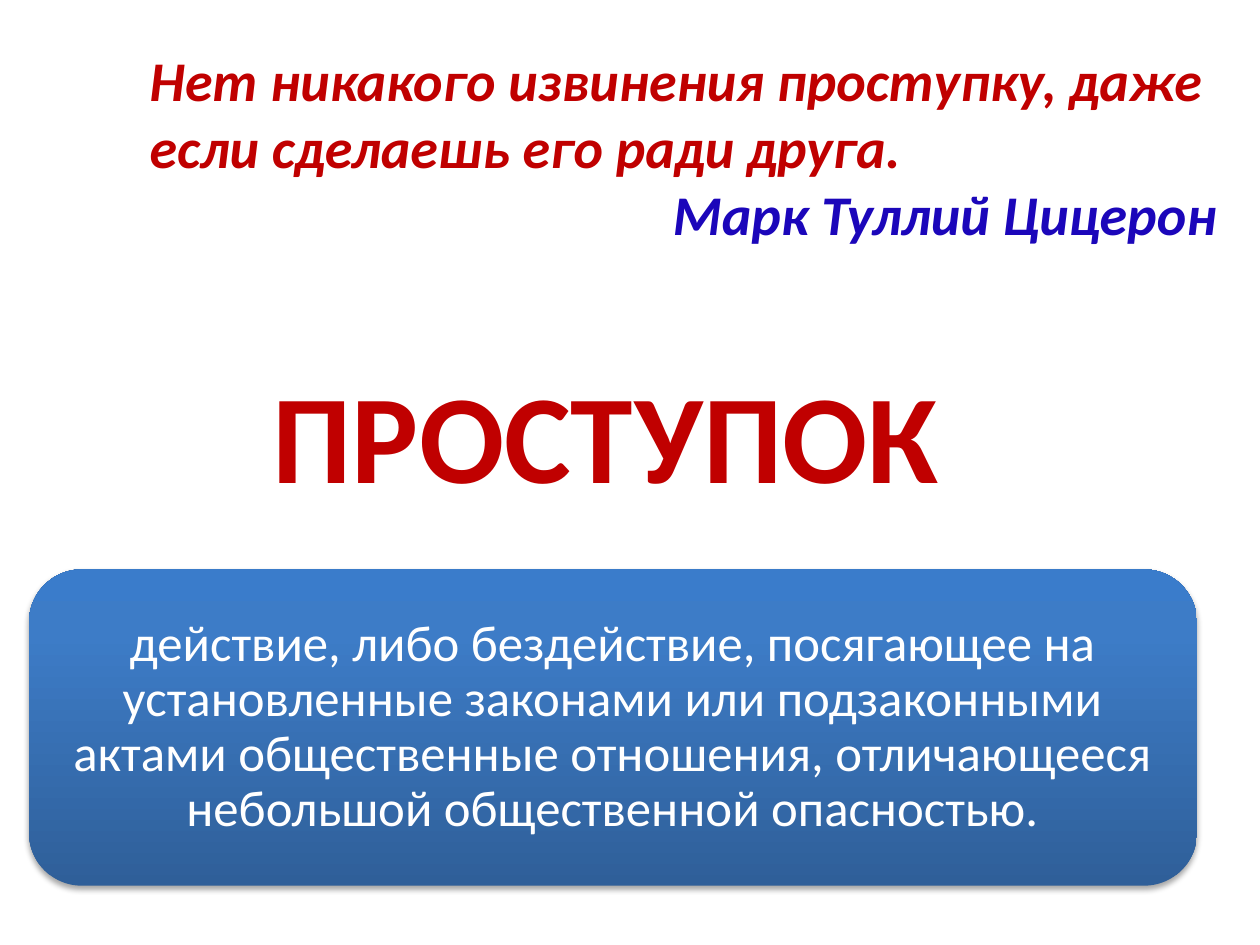
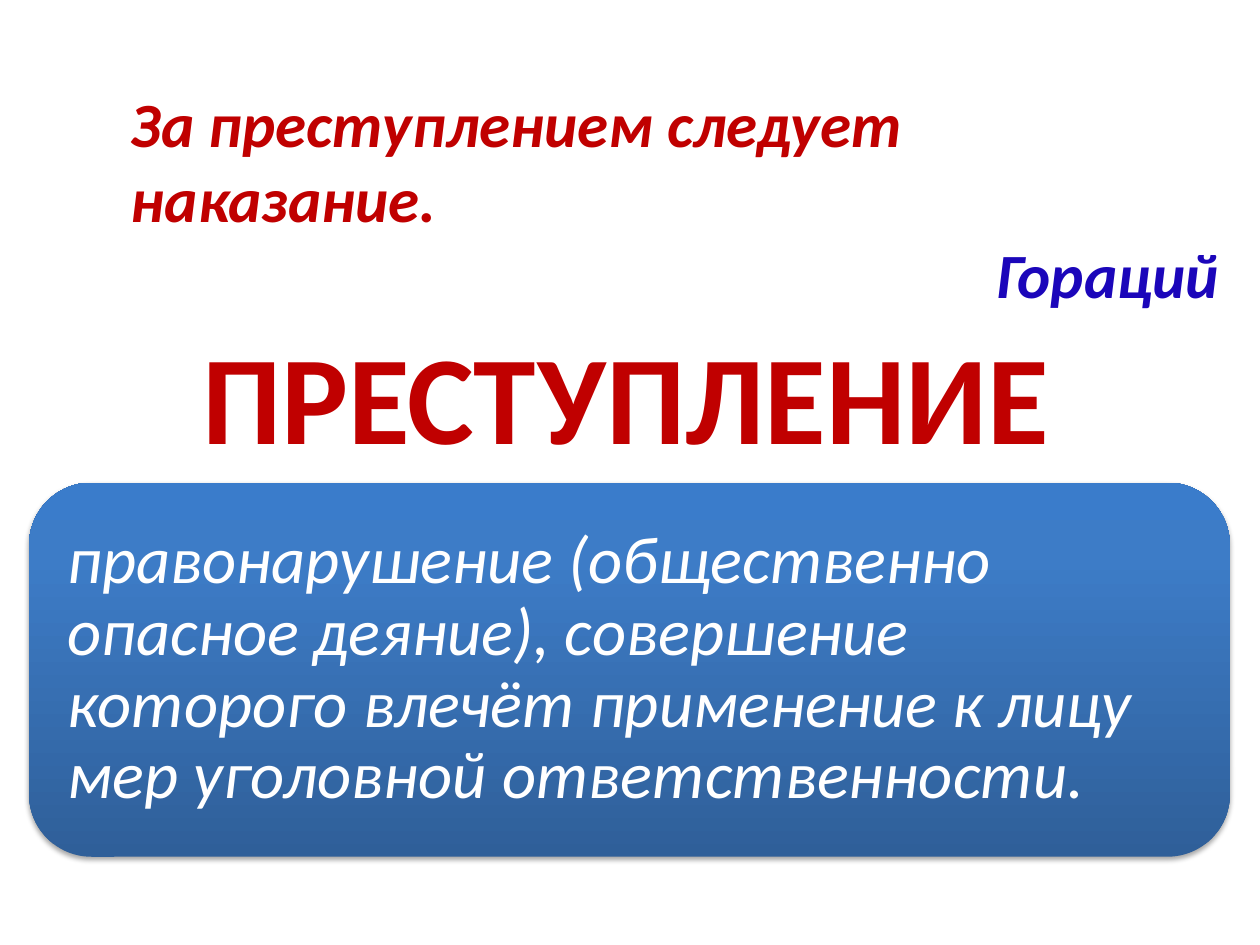
from lxml.etree import SubElement
from pptx import Presentation
from pptx.dml.color import RGBColor
from pptx.enum.shapes import MSO_SHAPE
from pptx.enum.text import MSO_ANCHOR, PP_ALIGN
from pptx.oxml.ns import qn
from pptx.util import Pt

RED = RGBColor(0xC0, 0x00, 0x00)
INDIGO = RGBColor(0x1B, 0x06, 0xBA)
WHITE = RGBColor(0xFF, 0xFF, 0xFF)
BLACK = RGBColor(0x00, 0x00, 0x00)
PANEL_GRADIENT = [
    (0, RGBColor(0x2F, 0x5F, 0x99)),
    (80, RGBColor(0x3D, 0x7C, 0xC7)),
    (100, RGBColor(0x3A, 0x7C, 0xCB)),
]
FONT = "Calibri"
TERM_SIZE = (648, 90)
CORNER_INSET = 0.0488

SLIDES = [
    {
        "quote": "Нет никакого извинения проступку, даже если сделаешь его ради друга.",
        "author": "Марк Туллий Цицерон",
        "quote_area": (78.5, 22.3, 624.2, 123.8),
        "quote_size": 32,
        "term": "ПРОСТУПОК",
        "term_corner": (22.3, 202.3),
        "definition": "действие, либо бездействие, посягающее на установленные законами "
                      "или подзаконными актами общественные отношения, отличающееся "
                      "небольшой общественной опасностью.",
        "panel_area": (16.6, 325.4, 667.4, 180.7),
        "definition_format": {"size": 29, "align": PP_ALIGN.CENTER, "margins": (8.6, 8.6)},
    },
    {
        "quote": "За преступлением следует наказание.",
        "author": "Гораций",
        "quote_area": (67.7, 44.6, 635.8, 138.2),
        "quote_size": 36,
        "term": "ПРЕСТУПЛЕНИЕ",
        "term_corner": (33.8, 180),
        "definition": "правонарушение (общественно опасное деяние), совершение "
                      "которого влечёт применение к лицу мер уголовной ответственности.",
        "panel_area": (16.6, 275.8, 686.2, 213.8),
        "definition_format": {"size": 38, "italic": True, "margins": (11.5, 11.5)},
    },
]


def add_text(slide, area, *lines, size, bold=False, italic=False, align=PP_ALIGN.LEFT,
             anchor=MSO_ANCHOR.MIDDLE, margins=(7.2, 3.6), spacing=1.0):
    frame = slide.shapes.add_textbox(*map(Pt, area)).text_frame
    frame.word_wrap = True
    frame.vertical_anchor = anchor
    frame.margin_left = frame.margin_right = Pt(margins[0])
    frame.margin_top = frame.margin_bottom = Pt(margins[1])
    for number, (text, color, *own_align) in enumerate(lines):
        paragraph = frame.add_paragraph() if number else frame.paragraphs[0]
        paragraph.alignment = own_align[0] if own_align else align
        paragraph.line_spacing = spacing
        run = paragraph.add_run()
        run.text = text
        run.font.name = FONT
        run.font.size = Pt(size)
        run.font.bold = bold
        run.font.italic = italic
        run.font.color.rgb = color


def add_color(parent, color):
    return SubElement(parent, qn("a:srgbClr"), val=str(color))


def add_panel(slide, area):
    panel = slide.shapes.add_shape(MSO_SHAPE.ROUNDED_RECTANGLE, *map(Pt, area))
    panel.line.fill.background()
    panel.fill.gradient()
    panel.shadow.inherit = False
    properties = panel.element.spPr

    gradient = properties.find(qn("a:gradFill"))
    stops = gradient.find(qn("a:gsLst"))
    for stop in list(stops):
        stops.remove(stop)
    for position, color in PANEL_GRADIENT:
        add_color(SubElement(stops, qn("a:gs"), pos=str(position * 1000)), color)
    gradient.find(qn("a:lin")).set("ang", str(270 * 60000))

    shadow = SubElement(
        properties.find(qn("a:effectLst")), qn("a:outerShdw"),
        blurRad=str(Pt(3.1)), dist=str(Pt(1.8)), dir=str(90 * 60000), rotWithShape="0",
    )
    SubElement(add_color(shadow, BLACK), qn("a:alpha"), val="35000")


def inset_area(area):
    left, top, width, height = area
    inset = height * CORNER_INSET
    return left + inset, top + inset, width - 2 * inset, height - 2 * inset


def build_slide(deck, content):
    slide = deck.slides.add_slide(deck.slide_layouts[6])
    add_text(slide, content["term_corner"] + TERM_SIZE, (content["term"], RED),
             size=72, bold=True, align=PP_ALIGN.CENTER)
    add_panel(slide, content["panel_area"])
    add_text(slide, inset_area(content["panel_area"]), (content["definition"], WHITE),
             spacing=0.9, **content["definition_format"])
    add_text(slide, content["quote_area"], (content["quote"], RED),
             (content["author"], INDIGO, PP_ALIGN.RIGHT),
             size=content["quote_size"], bold=True, italic=True, anchor=MSO_ANCHOR.TOP)


def main():
    deck = Presentation()
    deck.slide_width, deck.slide_height = Pt(720), Pt(540)
    for content in SLIDES:
        build_slide(deck, content)
    deck.save("out.pptx")


if __name__ == "__main__":
    main()
